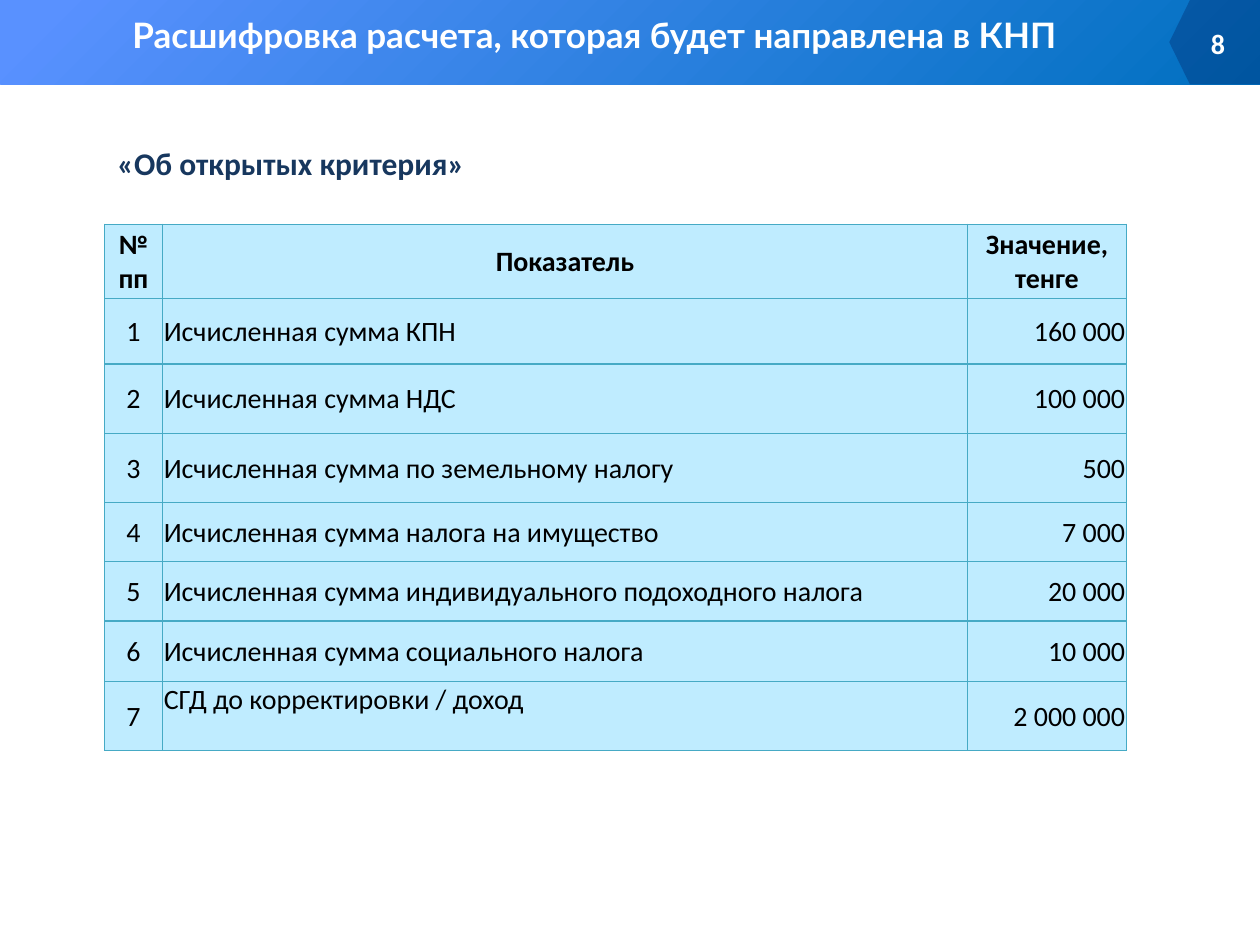
"""Build the slide that breaks down a tax calculation."""
import pptx
import pptx.dml.color
import pptx.enum.shapes
import pptx.enum.text
import pptx.oxml
import pptx.util

WIDE, HIGH = 10, 7.5
BAR = 0.67
EDGE = 0.83
COLS = (0.46, 6.39, 1.26)
ROWS = (0.59, 0.52, 0.55, 0.55, 0.47, 0.47, 0.48, 0.55)
HEAD = ("№ пп", "Показатель", "Значение, тенге")
ITEMS = (
    ("Исчисленная сумма КПН", "160 000"),
    ("Исчисленная сумма НДС", "100 000"),
    ("Исчисленная сумма по земельному налогу", "500"),
    ("Исчисленная сумма налога на имущество", "7 000"),
    ("Исчисленная сумма индивидуального подоходного налога", "20 000"),
    ("Исчисленная сумма социального налога", "10 000"),
    ("СГД до корректировки / доход", "2 000 000"),
)
ALIGN = pptx.enum.text.PP_ALIGN
ANCHOR = pptx.enum.text.MSO_ANCHOR
SHAPE = pptx.enum.shapes.MSO_SHAPE
SIDES = (ALIGN.CENTER, ALIGN.LEFT, ALIGN.RIGHT)


def inch(*sizes):
    """Turn numbers into inch lengths."""
    return [pptx.util.Inches(size) for size in sizes]


def shade(text):
    """Turn a hex string into a colour."""
    return pptx.dml.color.RGBColor.from_string(text)


def write(frame, text, size, color, side, bold=True, face="Calibri"):
    """Put one styled paragraph in a text frame."""
    frame.text = text
    line = frame.paragraphs[0]
    line.alignment = side
    font = line.font
    font.name, font.size, font.bold = face, pptx.util.Pt(size), bold
    font.color.rgb = shade(color)


def block(slide, kind, *box):
    """Add a preset shape with no line or shadow."""
    shape = slide.shapes.add_shape(kind, *inch(*box))
    shape.shadow.inherit = False
    shape.line.fill.background()
    return shape


def banner(slide):
    """Draw the gradient bar and the page marker."""
    fill = block(slide, SHAPE.RECTANGLE, 0, 0, WIDE, BAR).fill
    fill.gradient()
    fill.gradient_angle = 315
    for stop, place, color in zip(fill.gradient_stops, (0.04, 1), ("5991FF", "0070C0")):
        stop.position = place
        stop.color.rgb = shade(color)
    flag = block(slide, SHAPE.PENTAGON, WIDE - 0.72, 0, 0.72, BAR)
    flag.rotation = 180
    flag.adjustments[0] = 0.245
    flag.fill.solid()
    flag.fill.fore_color.rgb = shade("002060")
    tint = flag.fill._xPr.find(".//" + pptx.oxml.ns.qn("a:srgbClr"))
    pptx.oxml.xmlchemy.OxmlElement("a:alpha")
    alpha = pptx.oxml.xmlchemy.OxmlElement("a:alpha")
    alpha.set("val", "33000")
    tint.append(alpha)


def heading(slide, text):
    """Place the title over the bar."""
    title = slide.shapes.title
    title.left, title.top, title.width, title.height = inch(0.43, 0.06, 8.58, 0.44)
    slide.shapes._spTree.append(title._element)
    frame = title.text_frame
    write(frame, text, 20, "FFFFFF", ALIGN.CENTER, face="Lato")
    frame.vertical_anchor = ANCHOR.TOP
    frame.auto_size = pptx.enum.text.MSO_AUTO_SIZE.NONE


def label(slide, box, text, size, color, side, anchor=ANCHOR.TOP):
    """Add a text box."""
    frame = slide.shapes.add_textbox(*inch(*box)).text_frame
    frame.word_wrap = True
    frame.vertical_anchor = anchor
    write(frame, text, size, color, side)


def border(cell, color, width):
    """Draw all four sides of a cell."""
    props = cell._tc.get_or_add_tcPr()
    for spot, side in enumerate("LRTB"):
        props.insert(spot, pptx.oxml.parse_xml(
            f'<a:ln{side} {pptx.oxml.ns.nsdecls("a")} w="{pptx.util.Pt(width)}">'
            f'<a:solidFill><a:srgbClr val="{color}"/></a:solidFill></a:ln{side}>'))


def grid(slide):
    """Add the table of tax sums."""
    data = [HEAD] + [(str(num), *item) for num, item in enumerate(ITEMS, 1)]
    box = inch(EDGE, 1.78, sum(COLS), sum(ROWS))
    table = slide.shapes.add_table(len(ROWS), len(COLS), *box).table
    for col, width in zip(table.columns, inch(*COLS)):
        col.width = width
    for row, height in zip(table.rows, inch(*ROWS)):
        row.height = height
    for y, line in enumerate(data):
        for x, text in enumerate(line):
            cell = table.cell(y, x)
            cell.fill.solid()
            cell.fill.fore_color.rgb = shade("BFECFF")
            cell.margin_left = cell.margin_right = cell.margin_top = inch(0.01)[0]
            cell.margin_bottom = 0
            cell.vertical_anchor = ANCHOR.MIDDLE
            side = SIDES[x] if y else ALIGN.CENTER
            write(cell.text_frame, text, 16, "000000", side, bold=y == 0)
            border(cell, "46AAC5", 0.75)
    table.cell(len(ITEMS), 1).vertical_anchor = ANCHOR.TOP


def main():
    """Build and save the slide."""
    deck = pptx.Presentation()
    deck.slide_width, deck.slide_height = inch(WIDE, HIGH)
    slide = deck.slides.add_slide(deck.slide_layouts[5])
    grid(slide)
    banner(slide)
    label(slide, (9.28, 0.19, 0.54, 0.3), "8", 16, "FFFFFF", ALIGN.RIGHT, ANCHOR.MIDDLE)
    heading(slide, "Расшифровка расчета, которая будет направлена в КНП")
    label(slide, (EDGE, 1.09, 2.96, 0.4), "«Об открытых критерия»", 18, "17375E", ALIGN.CENTER)
    deck.save("out.pptx")


if __name__ == "__main__":
    main()
